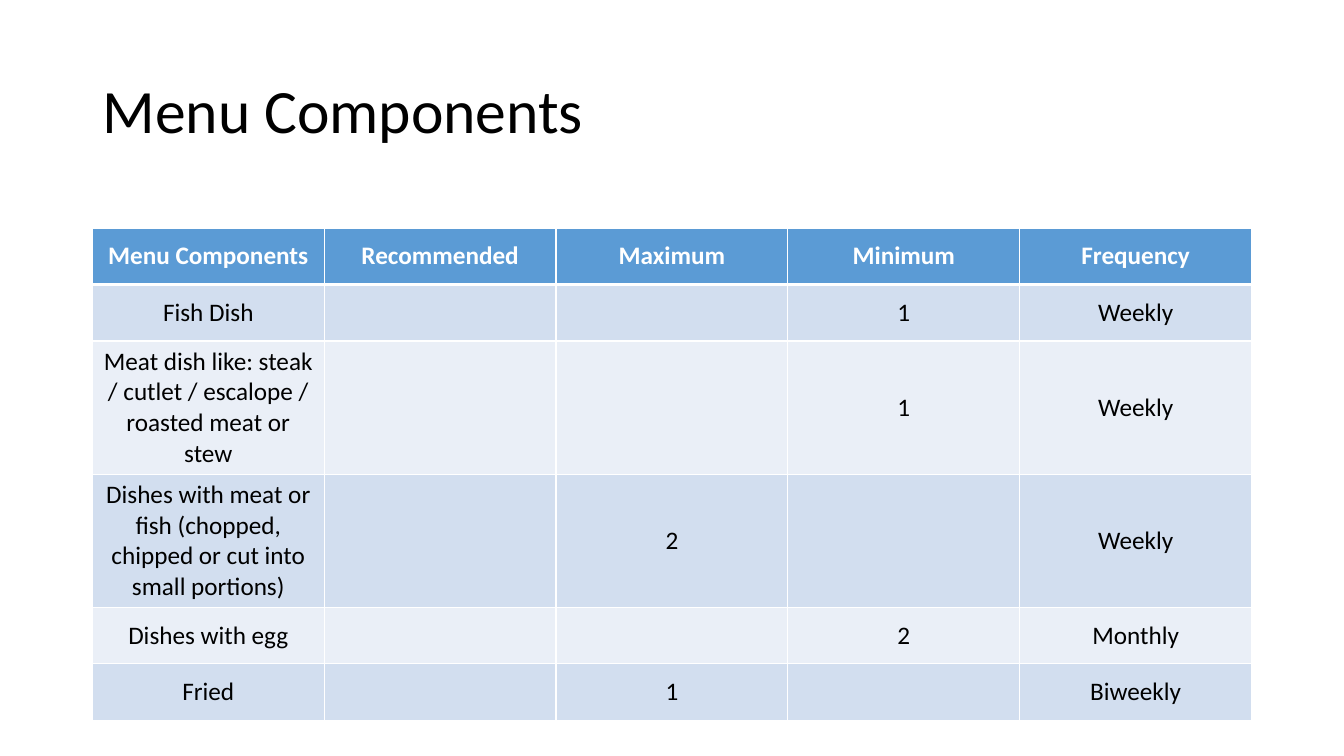
from dataclasses import dataclass

from lxml import etree
from pptx import Presentation
from pptx.dml.color import RGBColor
from pptx.enum.text import MSO_ANCHOR, MSO_AUTO_SIZE, PP_ALIGN
from pptx.oxml.ns import qn
from pptx.util import Pt

TITLE = "Menu Components"
HEADER = ("Menu Components", "Recommended", "Maximum", "Minimum", "Frequency")
DISHES = [
    ("Fish Dish", "", "", "1", "Weekly"),
    ("Meat dish like: steak / cutlet / escalope / roasted meat or stew", "", "", "1", "Weekly"),
    ("Dishes with meat or fish (chopped, chipped or cut into small portions)", "", "2", "", "Weekly"),
    ("Dishes with egg", "", "", "2", "Monthly"),
    ("Fried", "", "1", "", "Biweekly"),
]

CENTER = PP_ALIGN.CENTER
LEFT = PP_ALIGN.LEFT
MIDDLE = MSO_ANCHOR.MIDDLE
NO_AUTOFIT = MSO_AUTO_SIZE.NONE
TITLE_ONLY = 5


@dataclass(frozen=True)
class Theme:
    font: str = "Calibri"
    title_size: int = 44
    table_size: int = 18
    text: str = "000000"
    header_text: str = "FFFFFF"
    header_fill: str = "5B9BD5"
    bands: tuple = ("D2DEEF", "EAEFF7")
    border: str = "FFFFFF"
    thin: int = 1
    thick: int = 3


THEME = Theme()
MARGIN = 66
CONTENT_WIDTH = 828
TITLE_TOP, TITLE_HEIGHT = 28.8, 104.4
TABLE_TOP, ROW_HEIGHT = 162.8, 40.4


def style_font(paragraph, size, color, bold=False):
    font = paragraph.font
    font.name = THEME.font
    font.size = Pt(size)
    font.bold = bold
    font.color.rgb = RGBColor.from_string(color)


def set_borders(cell, top, bottom):
    properties = cell._tc.get_or_add_tcPr()
    widths = {"lnL": THEME.thin, "lnR": THEME.thin, "lnT": top, "lnB": bottom}
    for position, (side, width) in enumerate(widths.items()):
        line = etree.Element(qn(f"a:{side}"), w=str(Pt(width)))
        fill = etree.SubElement(line, qn("a:solidFill"))
        etree.SubElement(fill, qn("a:srgbClr"), val=THEME.border)
        properties.insert(position, line)


def add_title(page):
    box = page.shapes.title
    box.left, box.top = Pt(MARGIN), Pt(TITLE_TOP)
    box.width, box.height = Pt(CONTENT_WIDTH), Pt(TITLE_HEIGHT)
    frame = box.text_frame
    frame.text = TITLE
    frame.auto_size = NO_AUTOFIT
    frame.vertical_anchor = MIDDLE
    paragraph = frame.paragraphs[0]
    paragraph.alignment = LEFT
    paragraph.line_spacing = 0.9
    style_font(paragraph, THEME.title_size, THEME.text)


def add_menu_table(page):
    rows = [HEADER, *DISHES]
    table = page.shapes.add_table(
        len(rows), len(HEADER), Pt(MARGIN), Pt(TABLE_TOP),
        Pt(CONTENT_WIDTH), Pt(ROW_HEIGHT * len(rows)),
    ).table
    for row_index, values in enumerate(rows):
        is_header = row_index == 0
        fill = THEME.header_fill if is_header else THEME.bands[(row_index - 1) % 2]
        color = THEME.header_text if is_header else THEME.text
        top = THEME.thick if row_index == 1 else THEME.thin
        bottom = THEME.thick if is_header else THEME.thin
        for column_index, value in enumerate(values):
            cell = table.cell(row_index, column_index)
            cell.text = value
            cell.vertical_anchor = MIDDLE
            cell.fill.solid()
            cell.fill.fore_color.rgb = RGBColor.from_string(fill)
            set_borders(cell, top, bottom)
            paragraph = cell.text_frame.paragraphs[0]
            paragraph.alignment = CENTER
            style_font(paragraph, THEME.table_size, color, is_header)


def main():
    deck = Presentation()
    deck.slide_width, deck.slide_height = Pt(960), Pt(540)
    page = deck.slides.add_slide(deck.slide_layouts[TITLE_ONLY])
    add_title(page)
    add_menu_table(page)
    deck.save("out.pptx")


if __name__ == "__main__":
    main()
